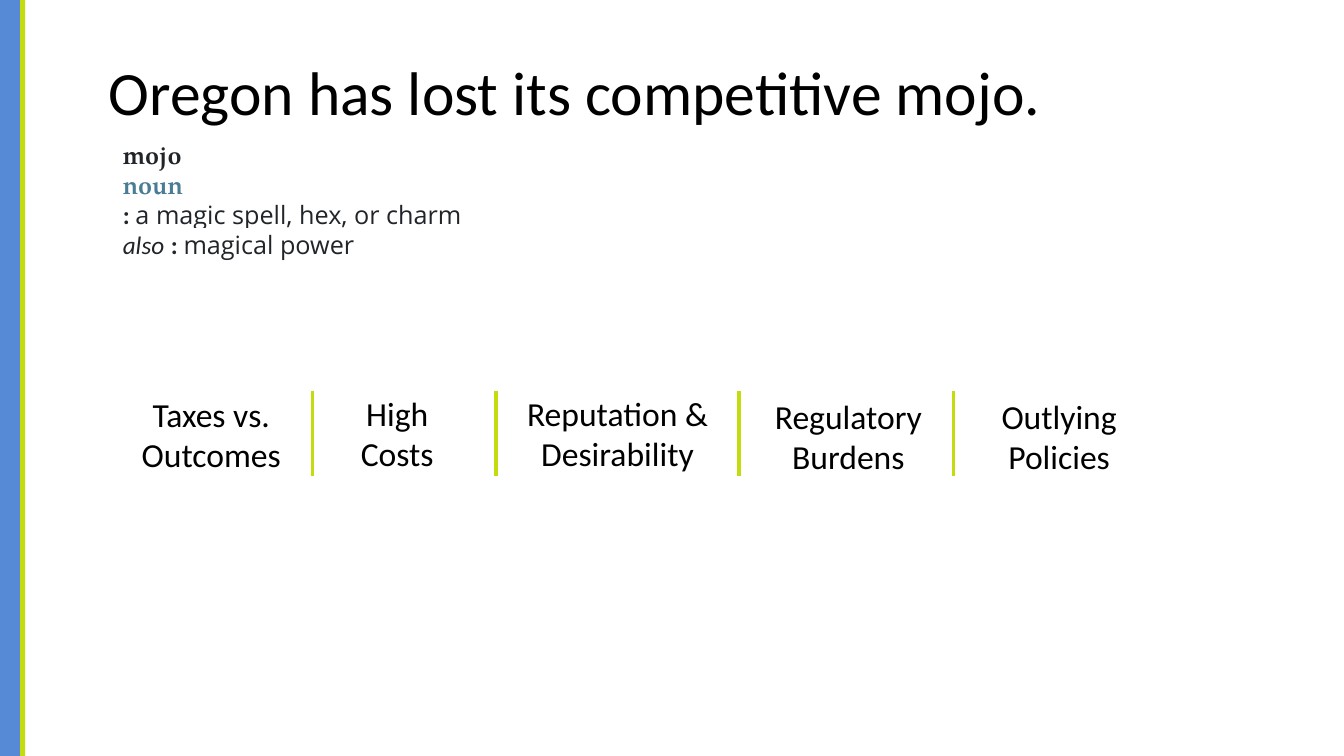
"""Build the slide on Oregon's lost competitive mojo."""
import pptx
import pptx.dml.color
import pptx.enum.shapes
import pptx.enum.text
import pptx.util
from lxml import etree
from pptx.oxml.ns import qn

Inches = pptx.util.Inches
LIME = "C4DB0D"
BLACK = "000000"
INK = "212529"
SERIF = {"name": "TeX Gyre Pagella", "bold": True}
SANS = {"name": "Open Sans"}
COLON = {"name": "Calibri", "bold": True}
DEFINITION = [
    [("mojo", INK, SERIF)],
    [("noun", "4A7D95", SERIF)],
    [(": ", INK, COLON), ("a magic spell, hex, or charm", INK, SANS)],
    [
        ("also", INK, {"name": "Calibri", "italic": True}),
        (" ", INK, SANS),
        (": ", INK, COLON),
        ("magical power", INK, SANS),
    ],
]
FACTORS = [
    (1.23, 3.86, 1.73, ["Taxes vs. Outcomes"]),
    (3.14, 3.85, 1.6, ["High Costs"]),
    (5.12, 3.85, 2.01, ["Reputation & Desirability"]),
    (7.55, 3.88, 1.73, ["Regulatory Burdens"]),
    (9.64, 3.88, 1.73, ["Outlying", "Policies"]),
]
DIVIDERS = [3.1, 4.92, 7.33, 9.46]


def color(value):
    """Return the colour of a hex string."""
    return pptx.dml.color.RGBColor.from_string(value)


def add_band(slide, left, width, fill):
    """Add a full-height band at the left edge."""
    band = slide.shapes.add_shape(
        pptx.enum.shapes.MSO_SHAPE.RECTANGLE,
        Inches(left), Inches(0), Inches(width), Inches(7.5),
    )
    band.shadow.inherit = False
    band.fill.solid()
    band.fill.fore_color.rgb = color(fill)
    band.line.fill.background()


def highlight(run, value):
    """Put a highlight colour behind a run."""
    mark = etree.Element(qn("a:highlight"))
    etree.SubElement(mark, qn("a:srgbClr")).set("val", value)
    run.font._element.find(qn("a:solidFill")).addnext(mark)


def add_text(slide, box, paragraphs, size, align=None, marker=None):
    """Add a text box whose paragraphs are lists of (text, colour, format) runs."""
    frame = slide.shapes.add_textbox(*map(Inches, box)).text_frame
    frame.word_wrap = True
    frame.auto_size = pptx.enum.text.MSO_AUTO_SIZE.SHAPE_TO_FIT_TEXT
    for index, parts in enumerate(paragraphs):
        paragraph = frame.add_paragraph() if index else frame.paragraphs[0]
        paragraph.alignment = align
        for text, ink, style in parts:
            run = paragraph.add_run()
            run.text = text
            run.font.color.rgb = color(ink)
            values = {"size": pptx.util.Pt(size), "bold": False, **style}
            for key, value in values.items():
                setattr(run.font, key, value)
            if marker:
                highlight(run, marker)


def add_divider(slide, x):
    """Add a vertical line between two factors."""
    divider = slide.shapes.add_connector(
        pptx.enum.shapes.MSO_CONNECTOR.STRAIGHT,
        Inches(x), Inches(3.88), Inches(x), Inches(4.72),
    )
    divider.line.color.rgb = color(LIME)
    divider.line.width = pptx.util.Pt(2.25)
    etree.SubElement(divider._element.spPr, qn("a:effectLst"))


def main():
    """Build and save the slide."""
    deck = pptx.Presentation()
    deck.slide_width = Inches(13.33)
    deck.slide_height = Inches(7.5)
    slide = deck.slides.add_slide(deck.slide_layouts[6])
    calibri = {"name": "Calibri"}
    add_band(slide, 0, 0.2, "578AD6")
    add_band(slide, 0.2, 0.05, LIME)
    title = [[("Oregon has lost its competitive mojo.", BLACK, calibri)]]
    add_text(slide, (0.98, 0.49, 10, 0.84), title, 44)
    add_text(slide, (1.12, 1.33, 5.04, 1.31), DEFINITION, 18, marker="FFFFFF")
    for left, top, width, lines in FACTORS:
        label = [[(line, BLACK, calibri)] for line in lines]
        add_text(slide, (left, top, width, 0.91), label, 24,
                 pptx.enum.text.PP_ALIGN.CENTER)
    for x in DIVIDERS:
        add_divider(slide, x)
    deck.save("out.pptx")


if __name__ == "__main__":
    main()
